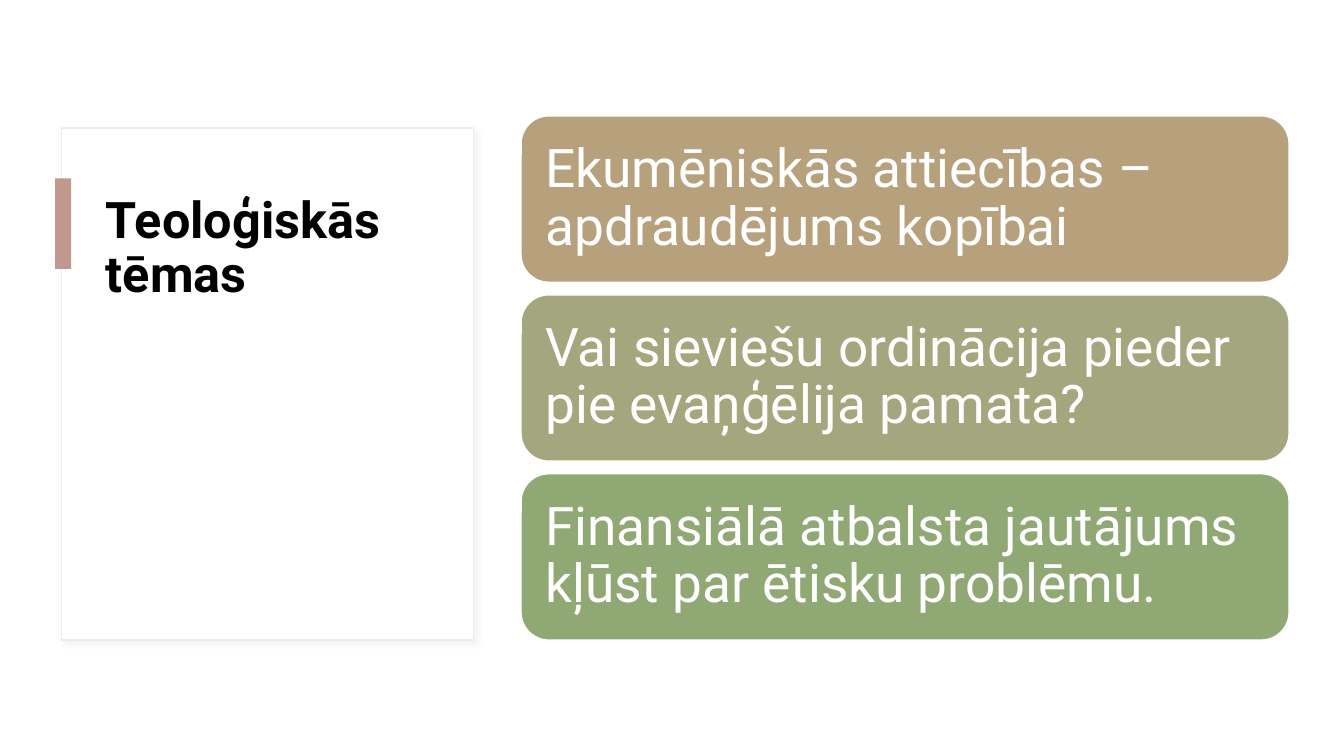
from dataclasses import dataclass

from lxml.etree import SubElement
from pptx import Presentation
from pptx.dml.color import RGBColor
from pptx.enum.shapes import MSO_SHAPE
from pptx.enum.text import MSO_ANCHOR, PP_ALIGN
from pptx.oxml.ns import qn
from pptx.shapes.autoshape import Shape
from pptx.slide import Slide
from pptx.text.text import TextFrame
from pptx.util import Pt

COLORS = {
    "white": "FFFFFF",
    "black": "000000",
    "card_border": "F0ECE5",
    "shadow": "D9D9D9",
    "accent": "C1988D",
    "sand": "B6A17C",
    "olive": "A4A67E",
    "green": "90A974",
}
FONT = "Roboto"
THEME_LEFT, THEME_TOP = 372.2, 82.8
THEME_WIDTH, THEME_HEIGHT = 548.6, 118.8
THEME_STEP = 127.8


@dataclass(frozen=True)
class Theme:
    text: str
    color: str


@dataclass(frozen=True)
class Box:
    left: float
    top: float
    width: float
    height: float


THEMES = [
    Theme("Ekumēniskās attiecības – apdraudējums kopībai", "sand"),
    Theme("Vai sieviešu ordinācija pieder pie evaņģēlija pamata?", "olive"),
    Theme("Finansiālā atbalsta jautājums kļūst par ētisku problēmu.", "green"),
]


def rgb(name: str) -> RGBColor:
    return RGBColor.from_string(COLORS[name])


def add_box(slide: Slide, kind: MSO_SHAPE, box: Box, fill: str, border: str | None = None) -> Shape:
    shape = slide.shapes.add_shape(kind, Pt(box.left), Pt(box.top), Pt(box.width), Pt(box.height))
    shape.shadow.inherit = False
    shape.fill.solid()
    shape.fill.fore_color.rgb = rgb(fill)
    if border:
        shape.line.color.rgb = rgb(border)
        shape.line.width = Pt(1)
    else:
        shape.line.fill.background()
    return shape


def write_text(frame: TextFrame, text: str, *, size: float, color: str, bold: bool = False,
               anchor: MSO_ANCHOR = MSO_ANCHOR.TOP, inset_x: float = 7.2, inset_y: float = 3.6) -> None:
    frame.word_wrap = True
    frame.vertical_anchor = anchor
    frame.margin_left = frame.margin_right = Pt(inset_x)
    frame.margin_top = frame.margin_bottom = Pt(inset_y)
    paragraph = frame.paragraphs[0]
    paragraph.alignment = PP_ALIGN.LEFT
    paragraph.line_spacing = 0.9
    run = paragraph.add_run()
    run.text = text
    run.font.name = FONT
    run.font.size = Pt(size)
    run.font.bold = bold
    run.font.color.rgb = rgb(color)


def add_soft_shadow(shape: Shape) -> None:
    effects = shape.element.spPr.find(qn("a:effectLst"))
    shadow = SubElement(effects, qn("a:outerShdw"), blurRad=str(Pt(4)), dist=str(Pt(3)),
                        dir=str(45 * 60000), algn="tl", rotWithShape="0")
    color = SubElement(shadow, qn("a:srgbClr"), val=COLORS["shadow"])
    SubElement(color, qn("a:alpha"), val="30000")


def add_title_card(slide: Slide) -> None:
    card = add_box(slide, MSO_SHAPE.RECTANGLE, Box(43.9, 91.4, 294.5, 365.8), "white", "card_border")
    add_soft_shadow(card)
    title = slide.shapes.title
    title.left, title.top, title.width, title.height = Pt(68.4), Pt(135.4), Pt(244), Pt(277.2)
    write_text(title.text_frame, "Teoloģiskās tēmas", size=36, color="black", bold=True)
    card.element.addnext(title.element)
    add_box(slide, MSO_SHAPE.RECTANGLE, Box(39.4, 127.4, 11.5, 64.8), "accent")


def add_themes(slide: Slide) -> None:
    for index, theme in enumerate(THEMES):
        box = Box(THEME_LEFT, THEME_TOP + index * THEME_STEP, THEME_WIDTH, THEME_HEIGHT)
        shape = add_box(slide, MSO_SHAPE.ROUNDED_RECTANGLE, box, theme.color, "white")
        write_text(shape.text_frame, theme.text, size=38, color="white",
                   anchor=MSO_ANCHOR.MIDDLE, inset_x=11.5, inset_y=11.5)


def main() -> None:
    presentation = Presentation()
    presentation.slide_width, presentation.slide_height = Pt(960), Pt(540)
    slide = presentation.slides.add_slide(presentation.slide_layouts[5])
    add_title_card(slide)
    add_themes(slide)
    presentation.save("out.pptx")


if __name__ == "__main__":
    main()
